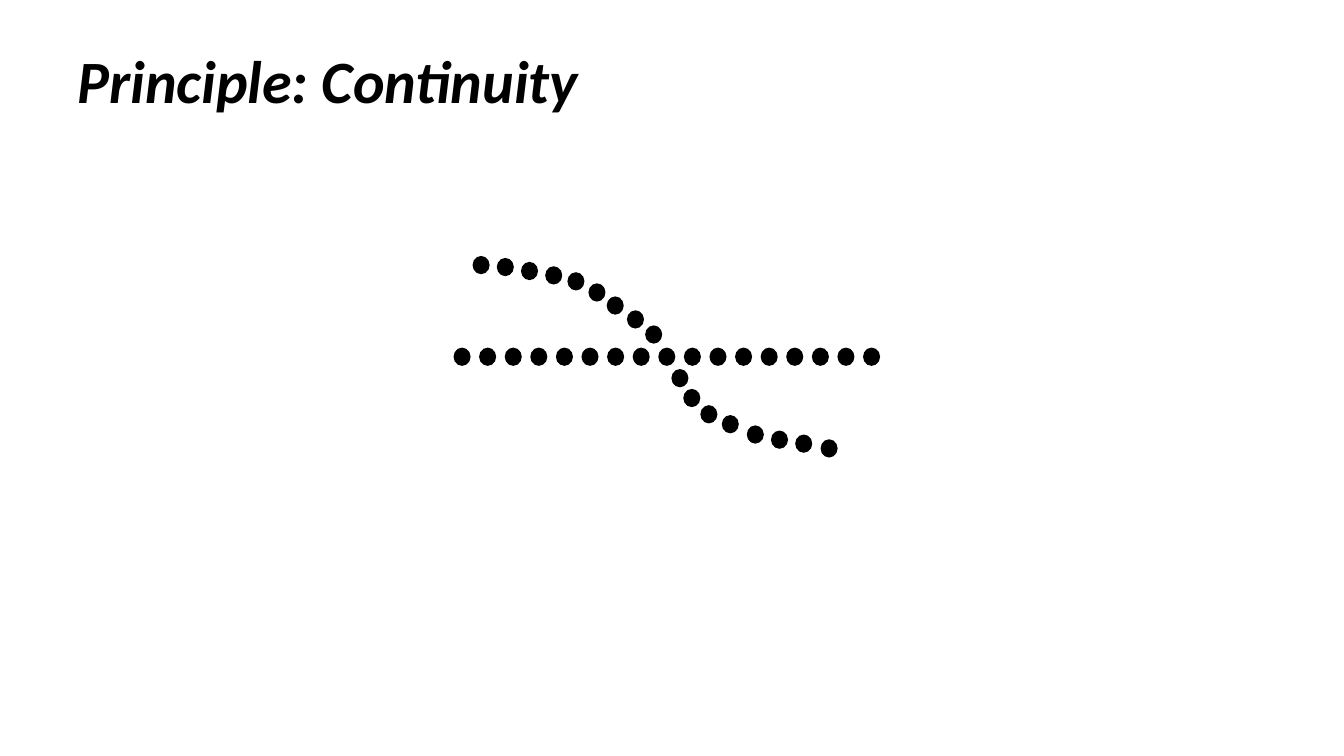
from pptx import Presentation
from pptx.dml.color import RGBColor
from pptx.enum.shapes import MSO_SHAPE
from pptx.enum.text import MSO_ANCHOR
from pptx.util import Cm, Pt

BLACK = RGBColor(0, 0, 0)
OVAL = MSO_SHAPE.OVAL
BOTTOM = MSO_ANCHOR.BOTTOM

DOT_WIDTH, DOT_HEIGHT = 0.43, 0.46
ROW_LEFT, ROW_TOP = 11.43, 8.76
ROW_STEP, ROW_COUNT = 0.645, 17
CURVE = [
    (11.91, 6.45), (12.52, 6.5), (13.13, 6.6), (13.74, 6.71),
    (14.3, 6.86), (14.83, 7.14), (15.29, 7.47), (15.8, 7.82),
    (16.26, 8.2), (16.92, 9.3), (17.22, 9.8), (17.65, 10.21),
    (18.19, 10.46), (18.82, 10.72), (19.43, 10.85), (20.04, 10.95),
    (20.68, 11.07),
]
TITLE_FONT = {"name": "Calibri", "size": Pt(42.9), "bold": True, "italic": True}


def add_title(slide, text):
    box = slide.shapes.add_textbox(Cm(1.7), Cm(0.53), Cm(23.09), Cm(2.54))
    frame = box.text_frame
    frame.word_wrap = True
    frame.vertical_anchor = BOTTOM
    line = frame.paragraphs[0]
    line.line_spacing = 0.9
    run = line.add_run()
    run.text = text
    for key, value in TITLE_FONT.items():
        setattr(run.font, key, value)
    run.font.color.rgb = BLACK


def add_dot(slide, left, top):
    dot = slide.shapes.add_shape(
        OVAL, Cm(left), Cm(top), Cm(DOT_WIDTH), Cm(DOT_HEIGHT))
    dot.shadow.inherit = False
    dot.fill.solid()
    dot.fill.fore_color.rgb = BLACK
    dot.line.fill.background()


def main():
    deck = Presentation()
    deck.slide_width, deck.slide_height = Cm(33.87), Cm(19.05)
    slide = deck.slides.add_slide(deck.slide_layouts[6])
    add_title(slide, "Principle: Continuity")
    row = [(ROW_LEFT + i * ROW_STEP, ROW_TOP) for i in range(ROW_COUNT)]
    for left, top in row + CURVE:
        add_dot(slide, left, top)
    deck.save("out.pptx")


if __name__ == "__main__":
    main()
